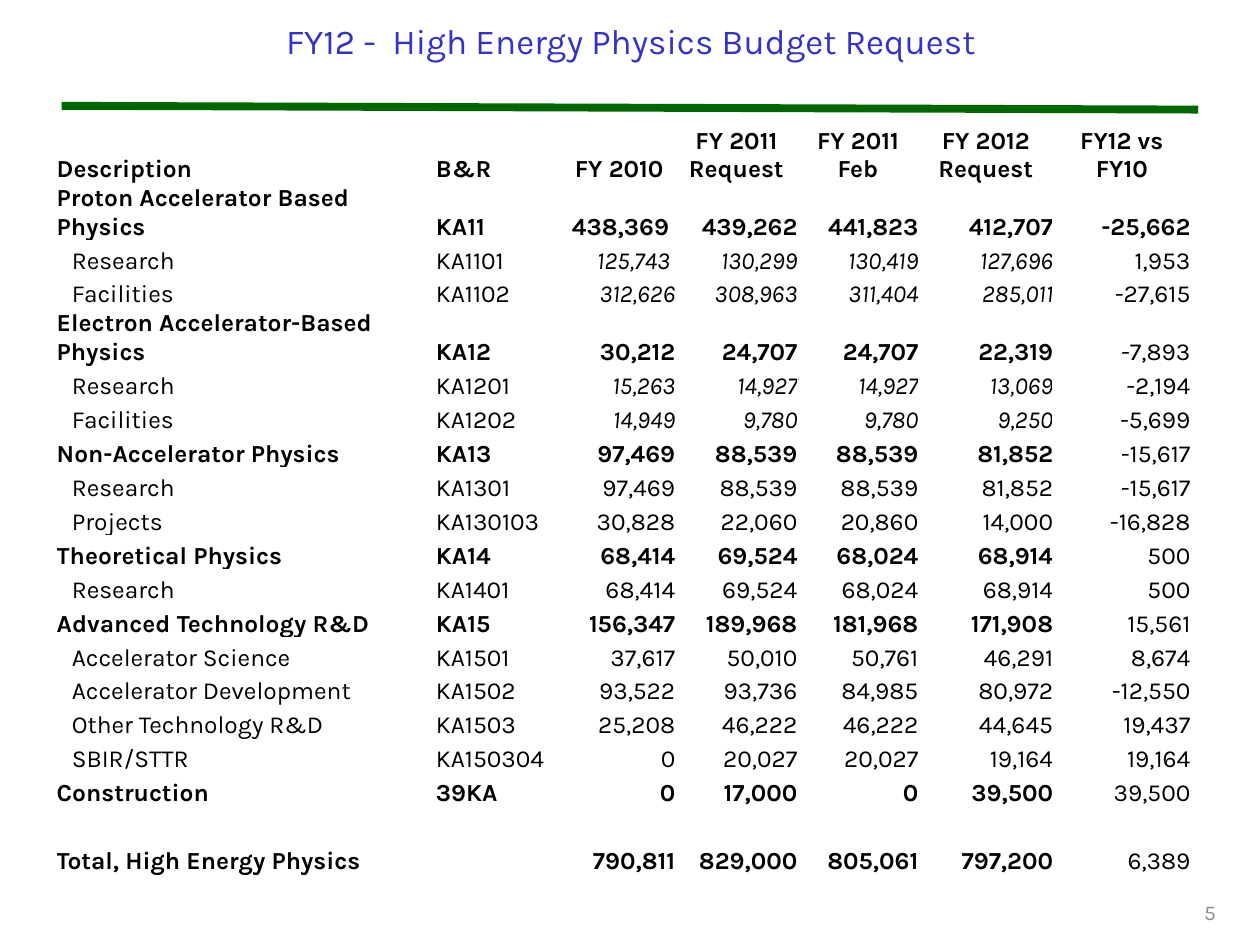
from lxml.etree import SubElement
from pptx import Presentation
from pptx.dml.color import RGBColor
from pptx.enum.shapes import MSO_CONNECTOR as Link
from pptx.enum.text import MSO_ANCHOR as Anchor, PP_ALIGN as Align
from pptx.oxml.ns import qn
from pptx.util import Inches, Pt

TITLE = "FY12 -  High Energy Physics Budget Request"
PAGE = "5"
HEAD = ["Description", "B&R", "FY 2010", "FY 2011 Request", "FY 2011 Feb",
        "FY 2012 Request", "FY12 vs FY10"]
# Kinds: group = bold, all = bold to the last column, part = indented,
# slant = indented with italic amounts
ROWS = [
    ("all", "Proton Accelerator Based Physics", "KA11",
     "438,369 ", "439,262", "441,823", "412,707", "-25,662"),
    ("slant", "Research", "KA1101",
     "125,743 ", "130,299", "130,419", "127,696", "1,953"),
    ("slant", "Facilities", "KA1102",
     "312,626", "308,963", "311,404", "285,011", "-27,615"),
    ("group", "Electron Accelerator-Based Physics", "KA12",
     "30,212", "24,707", "24,707", "22,319", "-7,893"),
    ("slant", "Research", "KA1201",
     "15,263", "14,927", "14,927", "13,069", "-2,194"),
    ("slant", "Facilities", "KA1202",
     "14,949", "9,780", "9,780", "9,250", "-5,699"),
    ("group", "Non-Accelerator Physics", "KA13",
     "97,469", "88,539", "88,539", "81,852", "-15,617"),
    ("part", "Research", "KA1301",
     "97,469", "88,539", "88,539", "81,852", "-15,617"),
    ("part", "Projects", "KA130103",
     "30,828", "22,060", "20,860", "14,000", "-16,828"),
    ("group", "Theoretical Physics", "KA14",
     "68,414", "69,524", "68,024", "68,914", "500"),
    ("part", "Research", "KA1401",
     "68,414", "69,524", "68,024", "68,914", "500"),
    ("group", "Advanced Technology R&D", "KA15",
     "156,347", "189,968", "181,968", "171,908", "15,561"),
    ("part", "Accelerator Science", "KA1501",
     "37,617", "50,010", "50,761", "46,291", "8,674"),
    ("part", "Accelerator Development", "KA1502",
     "93,522", "93,736", "84,985", "80,972", "-12,550"),
    ("part", "Other Technology R&D", "KA1503",
     "25,208", "46,222", "46,222", "44,645", "19,437"),
    ("part", "SBIR/STTR", "KA150304",
     "0", "20,027", "20,027", "19,164", "19,164"),
    ("group", "Construction", "39KA",
     "0", "17,000", "0", "39,500", "39,500"),
    ("group", "", "", "", "", "", "", ""),
    ("group", "Total, High Energy Physics", "",
     "790,811", "829,000", "805,061", "797,200", "6,389"),
]
WIDTHS = [3.01, 1.01, 0.89, 0.97, 0.96, 1.07, 1.09]
HEAD_H, ROW_H, INDENT = 0.54, 0.27, 0.12
THEME = {
    "font": "Karla",
    "title": (20, "3333CC"), "body": (14, "000000"), "page": (12, "8C8C8C"),
    "rule": "006600", "paper": "FFFFFF",
}


def rgb(name):
    return RGBColor.from_string(THEME[name])


def write(frame, text, role, align, bold=False, italic=False):
    size, color = THEME[role]
    para = frame.paragraphs[0]
    para.alignment = align
    run = para.add_run()
    run.text = text
    font = run.font
    font.name, font.size = THEME["font"], Pt(size)
    font.bold, font.italic = bold, italic
    font.color.rgb = RGBColor.from_string(color)


def shrink(para):
    """Give an empty paragraph the body size, so its row stays low."""
    end = SubElement(para._p, qn("a:endParaRPr"))
    end.set("sz", str(THEME["body"][0] * 100))


def fill_row(table, r, kind, texts):
    last = len(texts) - 1
    for c, text in enumerate(texts):
        cell = table.cell(r, c)
        cell.fill.background()
        cell.vertical_anchor = Anchor.BOTTOM
        cell.margin_top = cell.margin_bottom = cell.margin_right = 0
        inset = c == 0 and kind in ("part", "slant")
        cell.margin_left = Inches(INDENT if inset else 0)
        if not text:
            shrink(cell.text_frame.paragraphs[0])
            continue
        wide = Align.CENTER if kind == "head" else Align.RIGHT
        write(cell.text_frame, text, "body", Align.LEFT if c < 2 else wide,
              bold=kind in ("head", "all") or (kind == "group" and c < last),
              italic=kind == "slant" and 1 < c < last)


def add_title(slide):
    title = slide.shapes.title
    title.left, title.top = Inches(0.51), Inches(0.08)
    title.width, title.height = Inches(9), Inches(0.49)
    title.fill.solid()
    title.fill.fore_color.rgb = rgb("paper")
    title.text_frame.vertical_anchor = Anchor.MIDDLE
    write(title.text_frame, TITLE, "title", Align.CENTER)


def add_rule(slide):
    rule = slide.shapes.add_connector(
        Link.STRAIGHT, Inches(0.49), Inches(0.84), Inches(9.51), Inches(0.87))
    rule.line.color.rgb = rgb("rule")
    rule.line.width = Pt(4.5)
    SubElement(rule._element.spPr, qn("a:effectLst"))


def add_budget(slide):
    high = HEAD_H + ROW_H * len(ROWS)
    table = slide.shapes.add_table(
        len(ROWS) + 1, len(HEAD), Inches(0.45), Inches(0.92),
        Inches(sum(WIDTHS)), Inches(high)).table
    table.first_row = table.horz_banding = False
    for col, wide in zip(table.columns, WIDTHS):
        col.width = Inches(wide)
    for r, (kind, *texts) in enumerate([("head", *HEAD), *ROWS]):
        table.rows[r].height = Inches(ROW_H if r else HEAD_H)
        fill_row(table, r, kind, texts)


def add_page(slide):
    box = slide.shapes.add_textbox(
        Inches(7.41), Inches(6.98), Inches(2.34), Inches(0.52))
    frame = box.text_frame
    frame.word_wrap = True
    frame.vertical_anchor = Anchor.MIDDLE
    write(frame, PAGE, "page", Align.RIGHT)


def main():
    deck = Presentation()
    deck.slide_width, deck.slide_height = Inches(10), Inches(7.5)
    slide = deck.slides.add_slide(deck.slide_layouts[5])
    add_rule(slide)
    add_title(slide)
    add_budget(slide)
    add_page(slide)
    deck.save("out.pptx")


if __name__ == "__main__":
    main()
